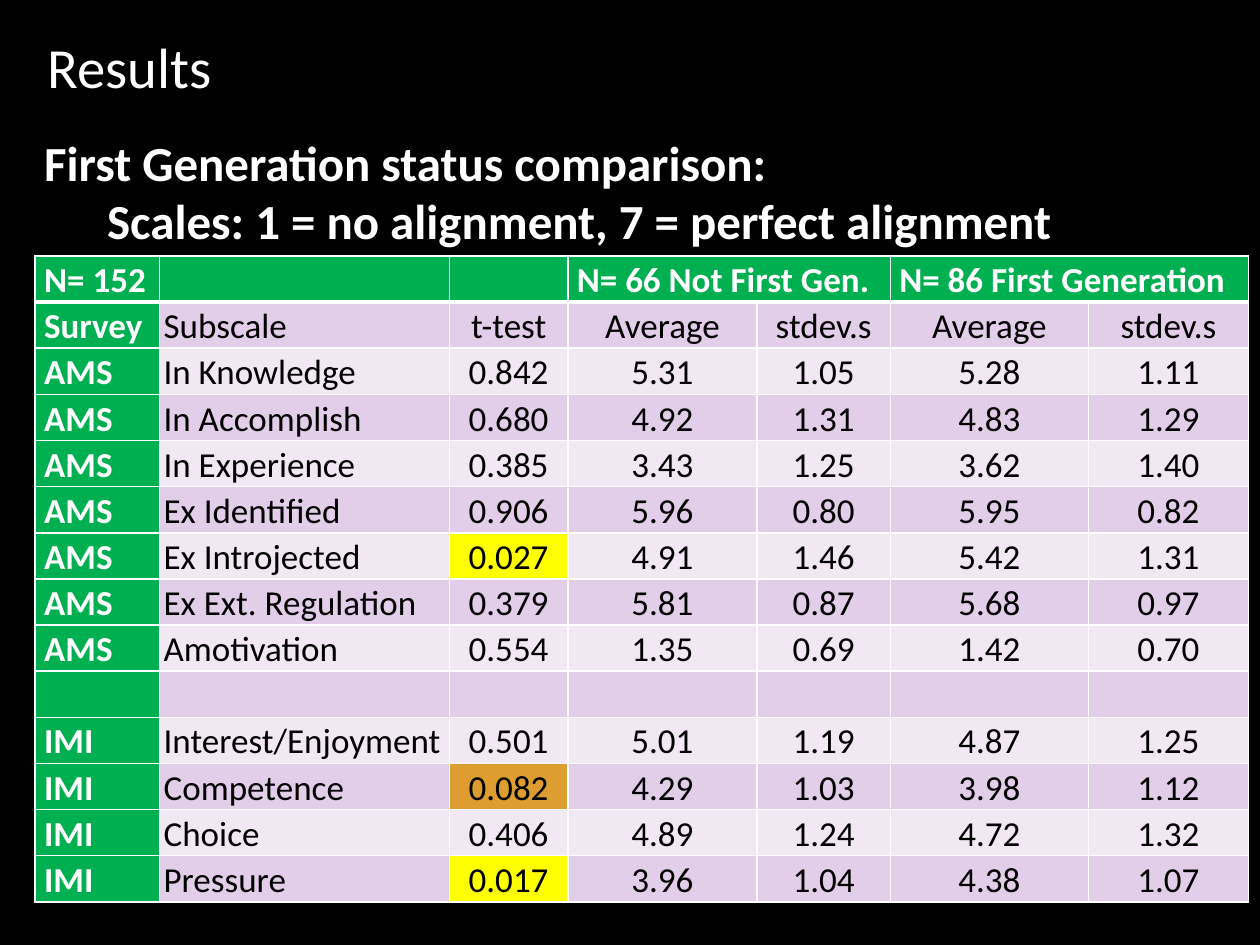
from lxml import etree
from pptx import Presentation
from pptx import util as u
from pptx.dml.color import RGBColor
from pptx.enum import text
from pptx.oxml.ns import qn

BLACK = RGBColor(0x00, 0x00, 0x00)
WHITE = RGBColor(0xFF, 0xFF, 0xFF)
GREEN = RGBColor(0x00, 0xB0, 0x50)
LILAC = RGBColor(0xE3, 0xCE, 0xE9)
PALE_LILAC = RGBColor(0xF1, 0xE8, 0xF4)
YELLOW = RGBColor(0xFF, 0xFF, 0x00)
ORANGE = RGBColor(0xDD, 0x9D, 0x31)


def write(paragraph, words, color, **font_format):
    run = paragraph.add_run()
    run.text = words
    run.font.color.rgb = color
    for key, value in {"name": "Calibri", **font_format}.items():
        setattr(run.font, key, value)


def add_border(cell, side, points):
    line = etree.SubElement(cell._tc.get_or_add_tcPr(), qn(f"a:ln{side}"), w=str(u.Pt(points)))
    fill = etree.SubElement(line, qn("a:solidFill"))
    etree.SubElement(fill, qn("a:srgbClr"), val=str(WHITE))


deck = Presentation()
deck.slide_width, deck.slide_height = u.Cm(25.4), u.Cm(19.05)
slide = deck.slides.add_slide(deck.slide_layouts[6])
slide.background.fill.solid()
slide.background.fill.fore_color.rgb = BLACK

# Heading
heading = slide.shapes.add_textbox(u.Cm(0.71), u.Cm(0.76), u.Cm(17.45), u.Cm(1.14)).text_frame
heading.word_wrap = True
heading.vertical_anchor = text.MSO_ANCHOR.MIDDLE
write(heading.paragraphs[0], "Results", WHITE, size=u.Pt(32.4))

# Comparison and its scale, the second line indented
comparison = slide.shapes.add_textbox(u.Cm(0.64), u.Cm(2.54), u.Cm(25.98), u.Cm(16.13)).text_frame
comparison.word_wrap = True
write(comparison.paragraphs[0], "First Generation status comparison:", WHITE, size=u.Pt(28), bold=True)
scales = comparison.add_paragraph()
scales._p.get_or_add_pPr().set("marL", str(u.Cm(1.27)))
write(scales, "Scales: 1 = no alignment, 7 = perfect alignment", WHITE, size=u.Pt(28), bold=True)

# Survey results
results = [
    ["N= 152", "", "", "N= 66 Not First Gen.", "", "N= 86 First Generation", ""],
    ["Survey", "Subscale", "t-test", "Average", "stdev.s", "Average", "stdev.s"],
    ["AMS", "In Knowledge", "0.842", "5.31", "1.05", "5.28", "1.11"],
    ["AMS", "In Accomplish", "0.680", "4.92", "1.31", "4.83", "1.29"],
    ["AMS", "In Experience", "0.385", "3.43", "1.25", "3.62", "1.40"],
    ["AMS", "Ex Identified", "0.906", "5.96", "0.80", "5.95", "0.82"],
    ["AMS", "Ex Introjected", "0.027", "4.91", "1.46", "5.42", "1.31"],
    ["AMS", "Ex Ext. Regulation", "0.379", "5.81", "0.87", "5.68", "0.97"],
    ["AMS", "Amotivation", "0.554", "1.35", "0.69", "1.42", "0.70"],
    [""] * 7,
    ["IMI", "Interest/Enjoyment", "0.501", "5.01", "1.19", "4.87", "1.25"],
    ["IMI", "Competence", "0.082", "4.29", "1.03", "3.98", "1.12"],
    ["IMI", "Choice", "0.406", "4.89", "1.24", "4.72", "1.32"],
    ["IMI", "Pressure", "0.017", "3.96", "1.04", "4.38", "1.07"],
]
highlights = {"0.027": YELLOW, "0.082": ORANGE, "0.017": YELLOW}
column_widths = [2.51, 5.84, 2.39, 3.81, 2.69, 3.99, 3.23]
row_height = 0.93

survey = slide.shapes.add_table(
    len(results), len(column_widths), u.Cm(0.71), u.Cm(5.16),
    u.Cm(sum(column_widths)), u.Cm(row_height * len(results))).table
for column, width in zip(survey.columns, column_widths):
    column.width = u.Cm(width)
for row in survey.rows:
    row.height = u.Cm(row_height)
for first in (3, 5):
    survey.cell(0, first).merge(survey.cell(0, first + 1))

for r, values in enumerate(results):
    band = LILAC if r % 2 else PALE_LILAC
    for c, value in enumerate(values):
        cell = survey.cell(r, c)
        is_header = r == 0 or c == 0
        side_margin = u.Cm(0.08 if c == 1 else 0.18)
        cell_format = {
            "vertical_anchor": text.MSO_ANCHOR.BOTTOM,
            "margin_left": side_margin, "margin_right": side_margin,
            "margin_top": 0, "margin_bottom": 0,
        }
        for key, setting in cell_format.items():
            setattr(cell, key, setting)

        # White grid, heavier under the top row
        for side in "LRTB":
            under_top_row = (r, side) in ((0, "B"), (1, "T"))
            add_border(cell, side, 3 if under_top_row else 1)
        cell.fill.solid()
        cell.fill.fore_color.rgb = GREEN if is_header else highlights.get(value, band)

        if value:
            paragraph = cell.text_frame.paragraphs[0]
            paragraph.line_spacing = 1.06 if c == 1 else 1.07
            if r > 0 and c > 1:
                paragraph.alignment = text.PP_ALIGN.CENTER
            write(paragraph, value, WHITE if is_header else BLACK, size=u.Pt(20), bold=is_header)

deck.save("out.pptx")
